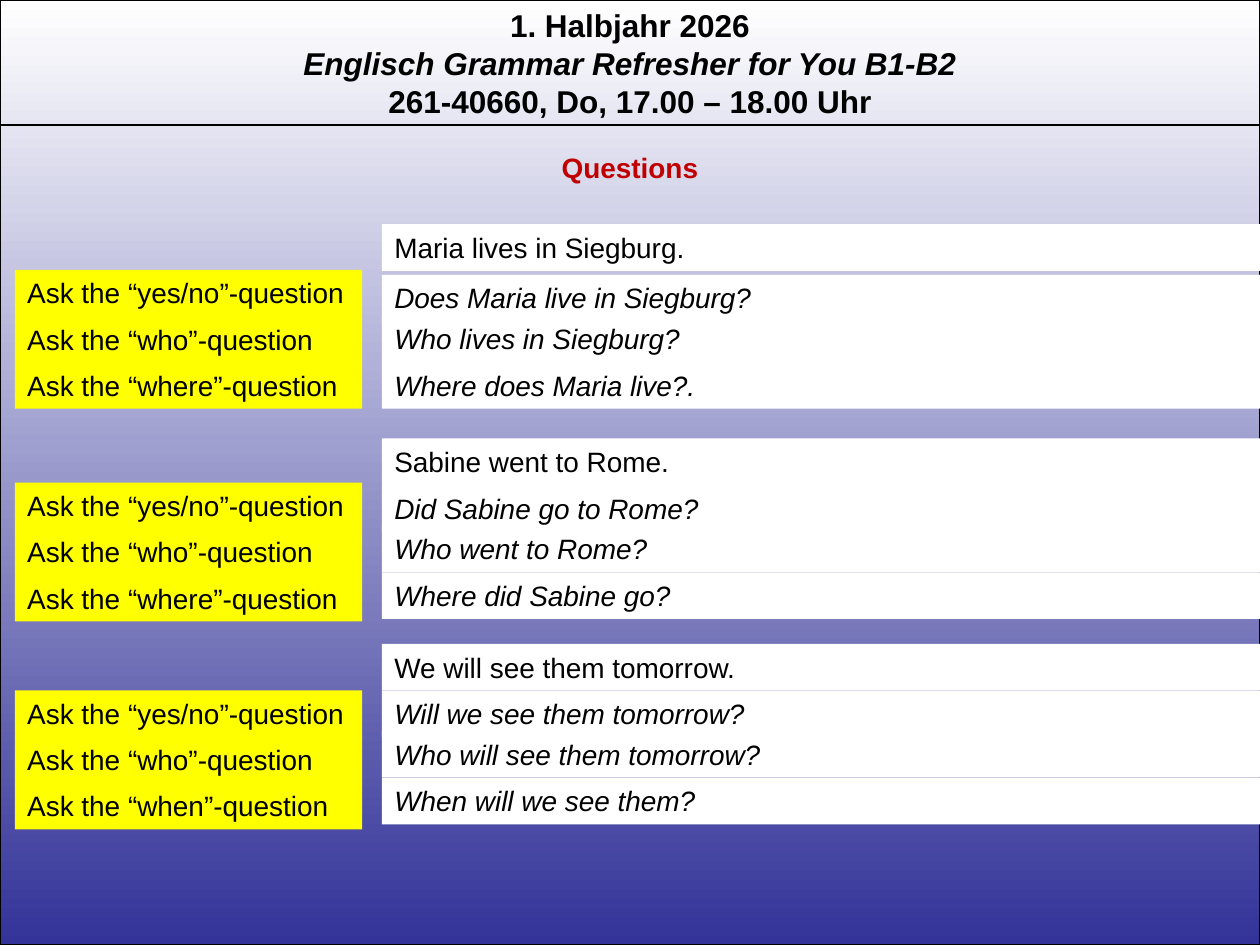
"""Build the English question drill slide with three sentence blocks."""
from pptx import Presentation
from pptx.dml.color import RGBColor
from pptx.enum.shapes import MSO_CONNECTOR, MSO_SHAPE
from pptx.enum.text import MSO_AUTO_SIZE, PP_ALIGN
from pptx.oxml.ns import qn
from pptx.util import Cm, Pt
from lxml import etree

CENTER, LEFT = PP_ALIGN.CENTER, PP_ALIGN.LEFT
GROW = MSO_AUTO_SIZE.SHAPE_TO_FIT_TEXT
RECTANGLE, STRAIGHT = MSO_SHAPE.RECTANGLE, MSO_CONNECTOR.STRAIGHT

COLORS = {"ink": "000000", "title": "C00000", "prompt": "FFFF00",
          "answer": "FFFFFF", "sky": "FFFFFF", "deep": "333399"}
COURSE = [("1. Halbjahr 2026", False),
          ("Englisch Grammar Refresher for You B1-B2", True),
          ("261-40660, Do, 17.00 – 18.00 Uhr", False)]
TITLE = "Questions"
BLOCKS = [
    {"statement": "Maria lives in Siegburg.", "tops": (4.52, 5.44, 5.54),
     "questions": [("yes/no", "Does Maria live in Siegburg?"),
                   ("who", "Who lives in Siegburg?"),
                   ("where", "Where does Maria live?.")]},
    {"statement": "Sabine went to Rome.", "tops": (8.84, 9.73, 9.78),
     "questions": [("yes/no", "Did Sabine go to Rome?"),
                   ("who", "Who went to Rome?"),
                   ("where", "Where did Sabine go?")]},
    {"statement": "We will see them tomorrow.", "tops": (12.98, 13.92, 13.92),
     "questions": [("yes/no", "Will we see them tomorrow?"),
                   ("who", "Who will see them tomorrow?"),
                   ("when", "When will we see them?")]},
]

WIDTH, HEIGHT = 25.4, 19.05
ROW_HEIGHT = 0.94
PROMPT_LEFT, PROMPT_WIDTH, PROMPT_STEP = 0.3, 7.0, 0.93
ANSWER_LEFT = 7.7
ANSWER_WIDTH = WIDTH - ANSWER_LEFT
ANSWER_OFFSETS = (0, 0.82, 1.76)
RULE_TOP = 2.52


def rgb(name):
    return RGBColor.from_string(COLORS[name])


def add_text(slide, lines, left, top, width, height=ROW_HEIGHT, size=16,
             color="ink", fill=None, bold=False, align=LEFT):
    box = slide.shapes.add_textbox(Cm(left), Cm(top), Cm(width), Cm(height))
    if fill:
        box.fill.solid()
        box.fill.fore_color.rgb = rgb(fill)
    frame = box.text_frame
    frame.word_wrap = True
    frame.auto_size = GROW
    frame.text = "\n".join(text for text, _ in lines)
    for paragraph, (_, italic) in zip(frame.paragraphs, lines):
        paragraph.alignment = align
        font = paragraph.font
        font.name, font.size = "Arial", Pt(size)
        font.bold, font.italic = bold, italic
        font.color.rgb = rgb(color)


def add_backdrop(slide):
    backdrop = slide.shapes.add_shape(RECTANGLE, 0, 0, Cm(WIDTH), Cm(HEIGHT))
    backdrop.shadow.inherit = False
    backdrop.fill.gradient()
    backdrop.fill.gradient_angle = 270
    for stop, name, position in zip(backdrop.fill.gradient_stops, ("sky", "deep"), (0, 1)):
        stop.color.rgb = rgb(name)
        stop.position = position
    backdrop.line.color.rgb = rgb("ink")
    backdrop.line.width = Pt(0.75)


def add_rule(slide):
    rule = slide.shapes.add_connector(STRAIGHT, 0, Cm(RULE_TOP), Cm(WIDTH), Cm(RULE_TOP))
    rule.line.color.rgb = rgb("ink")
    rule.line.width = Pt(0.75)
    etree.SubElement(rule.element.spPr, qn("a:effectLst"))


def add_block(slide, block):
    statement_top, prompt_top, answer_top = block["tops"]
    add_text(slide, [(block["statement"], False)], ANSWER_LEFT, statement_top,
             ANSWER_WIDTH, fill="answer")
    for row, (kind, answer) in enumerate(block["questions"]):
        add_text(slide, [(f"Ask the “{kind}”-question", False)], PROMPT_LEFT,
                 prompt_top + row * PROMPT_STEP, PROMPT_WIDTH, fill="prompt")
        add_text(slide, [(answer, True)], ANSWER_LEFT,
                 answer_top + ANSWER_OFFSETS[row], ANSWER_WIDTH, fill="answer")


def main():
    deck = Presentation()
    deck.slide_width, deck.slide_height = Cm(WIDTH), Cm(HEIGHT)
    slide = deck.slides.add_slide(deck.slide_layouts[6])
    add_backdrop(slide)
    add_text(slide, COURSE, 0, 0, WIDTH, 2.57, size=18, bold=True, align=CENTER)
    add_rule(slide)
    add_text(slide, [(TITLE, False)], 0, 2.92, WIDTH, color="title", bold=True, align=CENTER)
    for block in BLOCKS:
        add_block(slide, block)
    deck.save("out.pptx")


if __name__ == "__main__":
    main()
